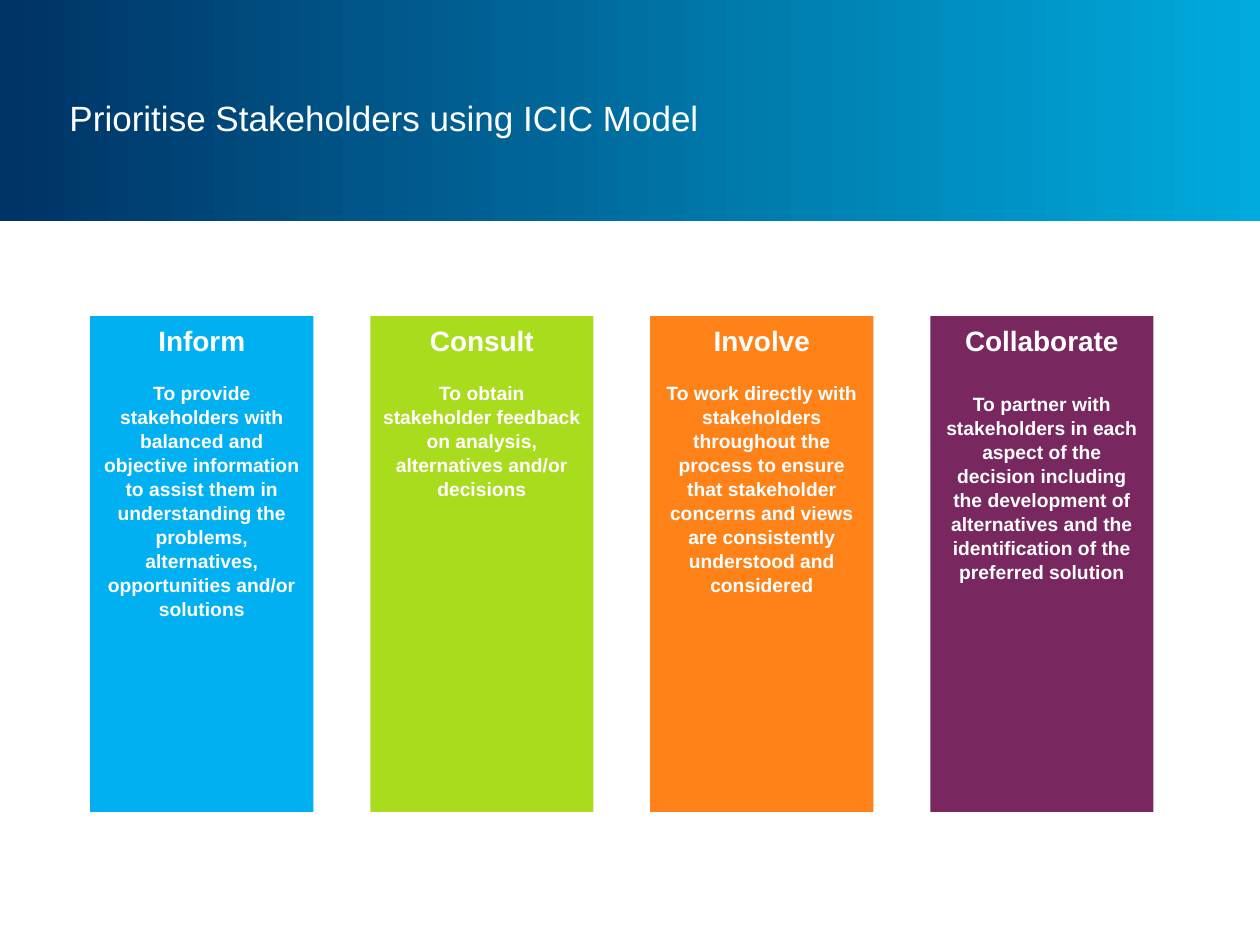
from dataclasses import dataclass

from pptx import Presentation
from pptx.dml.color import RGBColor
from pptx.enum.dml import MSO_THEME_COLOR
from pptx.enum.shapes import MSO_SHAPE
from pptx.enum.text import MSO_ANCHOR, MSO_AUTO_SIZE, PP_ALIGN
from pptx.slide import Slide
from pptx.util import Pt


@dataclass(frozen=True)
class Theme:
    font: str = "Arial"
    text: str = "FFFFFF"
    band_start: str = "003366"
    band_end: str = "00AADC"
    title_size: float = 20
    heading_size: float = 16
    body_size: float = 11
    line_spacing: float = 1.04


@dataclass(frozen=True)
class Card:
    heading: str
    body: str
    color: str
    gap: float = 13.2


THEME = Theme()
SLIDE_W, SLIDE_H = 720, 540
BAND_H = 126.4
CARD_LEFT, CARD_TOP, CARD_W, CARD_H = 51.6, 180.7, 127.5, 283.2
CARD_PITCH = 160

CARDS = [
    Card("Inform",
         "To provide stakeholders with balanced and objective information to assist "
         "them in understanding the problems, alternatives, opportunities and/or "
         "solutions", "00B0F0"),
    Card("Consult",
         "To obtain stakeholder feedback on analysis, alternatives and/or decisions",
         "AADC1E"),
    Card("Involve",
         "To work directly with stakeholders throughout the process to ensure that "
         "stakeholder concerns and views are consistently understood and considered",
         "FF8219"),
    Card("Collaborate",
         "To partner with stakeholders in each aspect of the decision including the "
         "development of alternatives and the identification of the preferred solution",
         "78285F", gap=19.2),
]


def add_run(p, text: str, size: float, bold: bool = False) -> None:
    r = p.add_run()
    r.text = text
    r.font.name = THEME.font
    r.font.size = Pt(size)
    r.font.bold = bold
    r.font.color.rgb = RGBColor.from_string(THEME.text)


def add_rect(slide: Slide, left: float, top: float, width: float, height: float):
    sp = slide.shapes.add_shape(MSO_SHAPE.RECTANGLE, Pt(left), Pt(top), Pt(width), Pt(height))
    sp.shadow.inherit = False
    sp.line.fill.background()
    return sp


def add_band(slide: Slide) -> None:
    """Draw the header gradient behind the title."""
    sp = add_rect(slide, 0, 0, SLIDE_W, BAND_H)
    sp.fill.gradient()
    sp.fill.gradient_angle = 0
    for stop, position, color in zip(sp.fill.gradient_stops, (0, 1),
                                     (THEME.band_start, THEME.band_end)):
        stop.position = position
        stop.color.theme_color = MSO_THEME_COLOR.ACCENT_1  # drops the preset tints
        stop.color.rgb = RGBColor.from_string(color)
    slide.shapes.title._element.addprevious(sp._element)


def fill_title(slide: Slide, text: str) -> None:
    sp = slide.shapes.title
    sp.left, sp.top, sp.width, sp.height = Pt(36.7), Pt(21.6), Pt(538.6), Pt(90.7)
    tf = sp.text_frame
    tf.auto_size = MSO_AUTO_SIZE.NONE
    tf.word_wrap = True
    tf.vertical_anchor = MSO_ANCHOR.MIDDLE
    tf.margin_left = tf.margin_right = tf.margin_top = tf.margin_bottom = Pt(3)
    p = tf.paragraphs[0]
    p.alignment = PP_ALIGN.LEFT
    add_run(p, text, THEME.title_size)


def add_card(slide: Slide, card: Card, left: float) -> None:
    sp = add_rect(slide, left, CARD_TOP, CARD_W, CARD_H)
    sp.fill.solid()
    sp.fill.fore_color.rgb = RGBColor.from_string(card.color)
    tf = sp.text_frame
    tf.word_wrap = True
    tf.vertical_anchor = MSO_ANCHOR.TOP
    heading, body = tf.paragraphs[0], tf.add_paragraph()
    body.space_before = Pt(card.gap)
    for p, text, size in ((heading, card.heading, THEME.heading_size),
                          (body, card.body, THEME.body_size)):
        p.alignment = PP_ALIGN.CENTER
        p.line_spacing = THEME.line_spacing
        add_run(p, text, size, bold=True)


def main() -> None:
    prs = Presentation()
    prs.slide_width, prs.slide_height = Pt(SLIDE_W), Pt(SLIDE_H)
    slide = prs.slides.add_slide(prs.slide_layouts.get_by_name("Title Only"))
    add_band(slide)
    fill_title(slide, "Prioritise Stakeholders using ICIC Model")
    for i, card in enumerate(CARDS):
        add_card(slide, card, CARD_LEFT + i * CARD_PITCH)
    prs.save("out.pptx")


if __name__ == "__main__":
    main()
